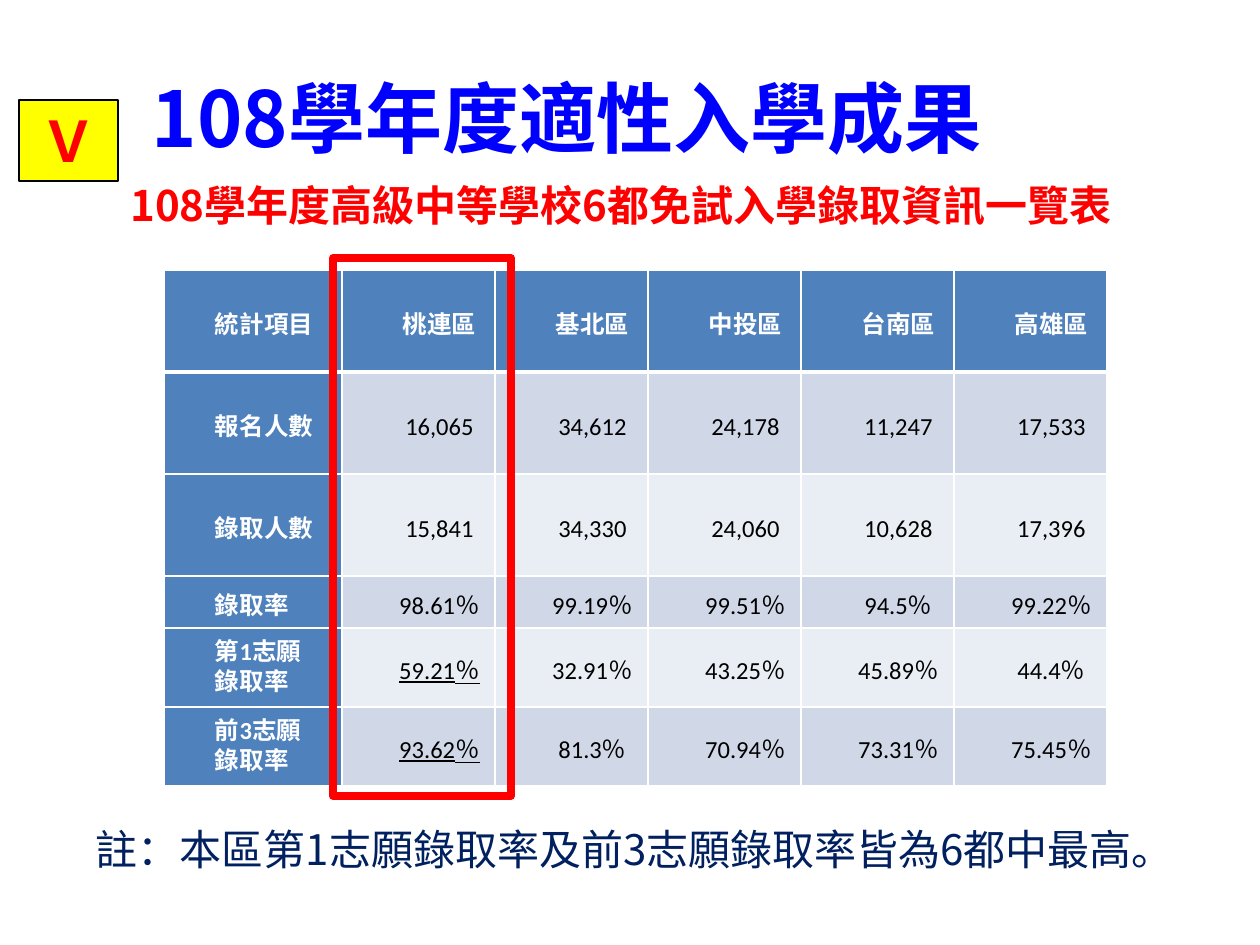
from lxml import etree
from pptx import Presentation
from pptx import util as u
from pptx.dml.color import RGBColor
from pptx.enum import shapes, text
from pptx.oxml import ns

SCALE = 914400 / 126
SANS = "Noto Sans CJK SC"
HEADER_FILL, BANDS = "4F81BD", ("D0D8E8", "E9EDF4")
COLUMN_WIDTHS = [178] + [153] * 5
ROW_HEIGHTS = [102, 102, 102, 52, 79, 79]
ROWS = [
    ["統計項目", "桃連區", "基北區", "中投區", "台南區", "高雄區"],
    ["報名人數", "16,065", "34,612", "24,178", "11,247", "17,533"],
    ["錄取人數", "15,841", "34,330", "24,060", "10,628", "17,396"],
    ["錄取率", "98.61％", "99.19％", "99.51％", "94.5％", "99.22％"],
    ["第1志願\n錄取率", "59.21％", "32.91％", "43.25％", "45.89％", "44.4％"],
    ["前3志願\n錄取率", "93.62％", "81.3％", "70.94％", "73.31％", "75.45％"],
]


def px(length):
    """Turn pixels into EMU."""
    return u.Emu(round(length * SCALE))


def colour(value):
    """Turn a hex string into a colour."""
    return RGBColor.from_string(value)


def apply(target, formats):
    """Set each attribute named in a dict."""
    for name, value in formats.items():
        setattr(target, name, value)


def place(shape, left, top, width, height):
    """Move and size a shape in pixels."""
    sides = dict(left=left, top=top, width=width, height=height)
    apply(shape, {name: px(value) for name, value in sides.items()})


def write(para, words, tint, east_asian=None, **formats):
    """Write one formatted span into a paragraph."""
    span = para.add_run()
    span.text = words
    apply(span.font, formats)
    span.font.color.rgb = colour(tint)
    if east_asian:
        properties = span.font._element
        etree.SubElement(properties, ns.qn("a:ea"), typeface=east_asian)


def fill_line(frame, words, tint, size, bold, font=SANS):
    """Write a centred line into a wrapped text frame."""
    apply(frame, dict(word_wrap=True, auto_size=text.MSO_AUTO_SIZE.NONE,
                      vertical_anchor=text.MSO_ANCHOR.MIDDLE))
    para = frame.paragraphs[0]
    para.alignment = text.PP_ALIGN.CENTER
    write(para, words, tint, font, name=font, size=u.Pt(size), bold=bold)


def add_line(page, bounds, words, tint, bold):
    """Add a text box that holds one centred line."""
    box = page.shapes.add_textbox(*map(px, bounds))
    fill_line(box.text_frame, words, tint, 24, bold)


def add_rectangle(page, bounds, line, width, fill=None):
    """Add an outlined rectangle, filled or hollow."""
    box = page.shapes.add_shape(shapes.MSO_SHAPE.RECTANGLE, *map(px, bounds))
    box.shadow.inherit = False
    box.line.color.rgb = colour(line)
    box.line.width = u.Pt(width)
    if fill:
        box.fill.solid()
        box.fill.fore_color.rgb = colour(fill)
    else:
        box.fill.background()
    return box


def set_borders(cell, widths):
    """Draw white cell borders with the given point widths."""
    properties = cell._tc.get_or_add_tcPr()
    for index, (side, width) in enumerate(widths.items()):
        line = etree.Element(ns.qn(f"a:ln{side}"), w=str(u.Pt(width)))
        fill = etree.SubElement(line, ns.qn("a:solidFill"))
        etree.SubElement(fill, ns.qn("a:srgbClr"), val="FFFFFF")
        properties.insert(index, line)


def format_cell(cell, row, column, words):
    """Fill, border and write one table cell."""
    heading = row == 0 or column == 0
    apply(cell, dict(margin_left=px(9), margin_right=px(9), margin_top=0,
                     margin_bottom=0, vertical_anchor=text.MSO_ANCHOR.MIDDLE))
    cell.fill.solid()
    cell.fill.fore_color.rgb = colour(HEADER_FILL if heading else BANDS[(row - 1) % 2])
    set_borders(cell, dict(L=1, R=1, T=3 if row == 1 else 1, B=3 if row == 0 else 1))
    lines = words.split("\n")
    for index, line in enumerate(lines):
        frame = cell.text_frame
        para = frame.add_paragraph() if index else frame.paragraphs[0]
        para._p.get_or_add_pPr().set("marL", str(px(42)))
        para.line_spacing = u.Pt(17 if len(lines) > 1 else 22)
        para.alignment = text.PP_ALIGN.CENTER if column else text.PP_ALIGN.LEFT
        write(para, line, "FFFFFF" if heading else "000000", name="Calibri",
              size=u.Pt(14), bold=heading, underline=column == 1 and row >= 4)


def add_results(page):
    """Add the table of admission results."""
    bounds = (164, 270, sum(COLUMN_WIDTHS), sum(ROW_HEIGHTS))
    table = page.shapes.add_table(len(ROWS), len(ROWS[0]), *map(px, bounds)).table
    for column, width in zip(table.columns, COLUMN_WIDTHS):
        column.width = px(width)
    for row, height in zip(table.rows, ROW_HEIGHTS):
        row.height = px(height)
    for row, values in enumerate(ROWS):
        for column, words in enumerate(values):
            format_cell(table.cell(row, column), row, column, words)


def main():
    """Build and save the slide."""
    deck = Presentation()
    deck.slide_width, deck.slide_height = px(1260), px(945)
    page = deck.slides.add_slide(deck.slide_layouts[5])
    title = page.shapes.title
    place(title, 0, 38, 1134, 158)
    fill_line(title.text_frame, "108學年度適性入學成果", "0000FF", 44, True)
    add_results(page)
    add_rectangle(page, (333, 258, 178, 538), "FF0000", 4.5)
    add_line(page, (54, 164, 1134, 82),
             "108學年度高級中等學校6都免試入學錄取資訊一覽表", "FF0000", True)
    add_line(page, (68, 808, 1134, 82),
             "註：本區第1志願錄取率及前3志願錄取率皆為6都中最高。", "002060", False)
    badge = add_rectangle(page, (19, 100, 99, 81), "000000", 1, "FFFF00")
    fill_line(badge.text_frame, "Ｖ", "FF0000", 32, True, "Noto Sans CJK TC")
    deck.save("out.pptx")


if __name__ == "__main__":
    main()
